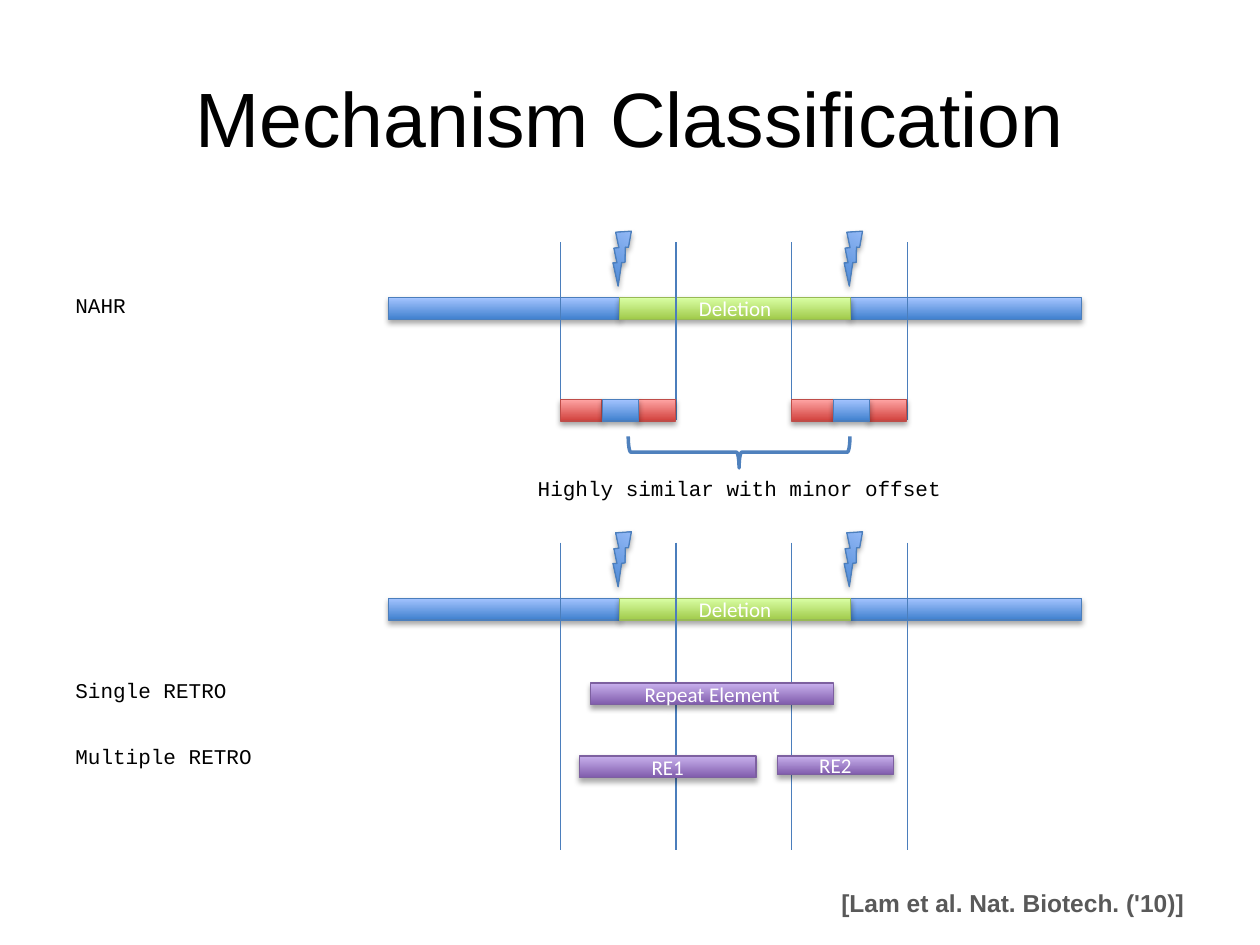
from lxml.etree import SubElement
from pptx import Presentation
from pptx.dml.color import RGBColor
from pptx.enum.shapes import MSO_CONNECTOR as Link, MSO_SHAPE as Form
from pptx.enum.text import MSO_ANCHOR as Anchor, MSO_AUTO_SIZE as Fit, PP_ALIGN as Align
from pptx.oxml.ns import qn
from pptx.util import Cm, Pt

BLUE = ("3F80CE", "A4C4FF", "4B7EBC")
GREEN = ("A0CA4A", "DAFFA5", "98B955")
RED = ("D1403C", "FFA6A5", "BF4C48")
PURPLE = ("7F5BAB", "C8B0ED", "7D60A0")
STEP = 4.66
THICK = 0.44


def tint(code):
    return RGBColor.from_string(code)


class Sketch:
    sans, mono, label = "Arial", "Courier New", "Calibri"

    def __init__(self, deck):
        self.slide = deck.slides.add_slide(deck.slide_layouts[6])
        self.shapes = self.slide.shapes

    def style(self, frame, text, face, size, color, align, bold=False):
        frame.text = text
        line = frame.paragraphs[0]
        line.alignment = align
        font = line.runs[0].font
        font.name, font.size, font.bold = face, Pt(size), bold
        font.color.rgb = tint(color)

    def text(self, x, y, wide, high, words, face=mono, size=12, color="000000", bold=False):
        box = self.shapes.add_textbox(Cm(x), Cm(y), Cm(wide), Cm(high))
        frame = box.text_frame
        frame.word_wrap = False
        frame.auto_size = Fit.SHAPE_TO_FIT_TEXT
        self.style(frame, words, face, size, color, Align.LEFT, bold)

    def title(self, words):
        box = self.shapes.add_textbox(Cm(1.27), Cm(0.76), Cm(22.86), Cm(3.18))
        frame = box.text_frame
        frame.word_wrap = True
        frame.vertical_anchor = Anchor.MIDDLE
        self.style(frame, words, self.sans, 44, "000000", Align.CENTER)

    def shade(self, shape):
        shape.shadow.inherit = False
        effects = shape.element.spPr.find(qn("a:effectLst"))
        outer = SubElement(effects, qn("a:outerShdw"), blurRad="40000", dist="23000",
                           dir="5400000", rotWithShape="0")
        black = SubElement(outer, qn("a:srgbClr"), val="000000")
        SubElement(black, qn("a:alpha"), val="35000")

    def block(self, x, y, wide, high, hues, words="", form=Form.RECTANGLE, turn=0):
        shape = self.shapes.add_shape(form, Cm(x), Cm(y), Cm(wide), Cm(high))
        shape.rotation = turn
        shape.fill.gradient()
        shape.fill.gradient_angle = 90
        for stop, hue in zip(shape.fill.gradient_stops, hues):
            stop.color.rgb = tint(hue)
        shape.line.color.rgb = tint(hues[2])
        shape.line.width = Pt(0.75)
        self.shade(shape)
        if words:
            shape.text_frame.vertical_anchor = Anchor.MIDDLE
            self.style(shape.text_frame, words, self.label, 12, "FFFFFF", Align.CENTER)

    def bolt(self, x, y):
        self.block(x, y, 0.64, 1.07, BLUE, form=Form.LIGHTNING_BOLT, turn=33.5)

    def guide(self, x, top, end):
        line = self.shapes.add_connector(Link.STRAIGHT, Cm(x), Cm(top), Cm(x), Cm(end))
        line.line.color.rgb = tint(BLUE[2])
        line.line.width = Pt(0.75)
        SubElement(line.element.spPr, qn("a:effectLst"))

    def brace(self, x, y, wide, high):
        shape = self.shapes.add_shape(Form.LEFT_BRACE, Cm(x), Cm(y), Cm(wide), Cm(high))
        shape.rotation = 270
        shape.shadow.inherit = False
        shape.fill.solid()
        shape.fill.fore_color.rgb = tint("FFFFFF")
        shape.line.color.rgb = tint("4F81BD")
        shape.line.width = Pt(2)

    def strand(self, top, end):
        for spot, hues, words in ((0, BLUE, ""), (2, BLUE, ""), (1, GREEN, "Deletion")):
            self.block(7.83 + spot * STEP, top, STEP, THICK, hues, words)
        for side in range(2):
            self.bolt(12.17 + side * STEP, top - 1.39)
            for edge in (11.3, 13.63):
                self.guide(edge + side * STEP, top - 1.12, end)

    def repeat(self, x, y):
        for shift, wide, hues in ((0, 0.84, RED), (1.56, 0.76, RED), (0.84, 0.73, BLUE)):
            self.block(x + shift, y, wide, THICK, hues)


def main():
    deck = Presentation()
    deck.slide_width, deck.slide_height = Cm(25.4), Cm(19.05)
    art = Sketch(deck)
    art.title("Mechanism Classification")

    art.strand(6, 8.46)
    for side in range(2):
        art.repeat(11.3 + side * STEP, 8.05)
    art.brace(14.58, 6.88, 0.64, 4.47)
    art.text(10.59, 9.47, 8.69, 0.77, "Highly similar with minor offset")

    art.strand(12.06, 17.14)
    art.block(11.91, 13.77, 4.9, THICK, PURPLE, "Repeat Element")
    art.block(11.68, 15.24, 3.56, THICK, PURPLE, "RE1")
    art.block(15.67, 15.24, 2.34, 0.38, PURPLE, "RE2")

    for y, wide, words in ((5.77, 1.52, "NAHR"), (13.54, 3.58, "Single RETRO"),
                           (14.86, 4.09, "Multiple RETRO")):
        art.text(1.27, y, wide, 0.77, words)
    art.text(16.71, 17.78, 7.47, 0.86, "[Lam et al. Nat. Biotech. ('10)]",
             art.sans, 14, "595959", True)
    deck.save("out.pptx")


if __name__ == "__main__":
    main()
